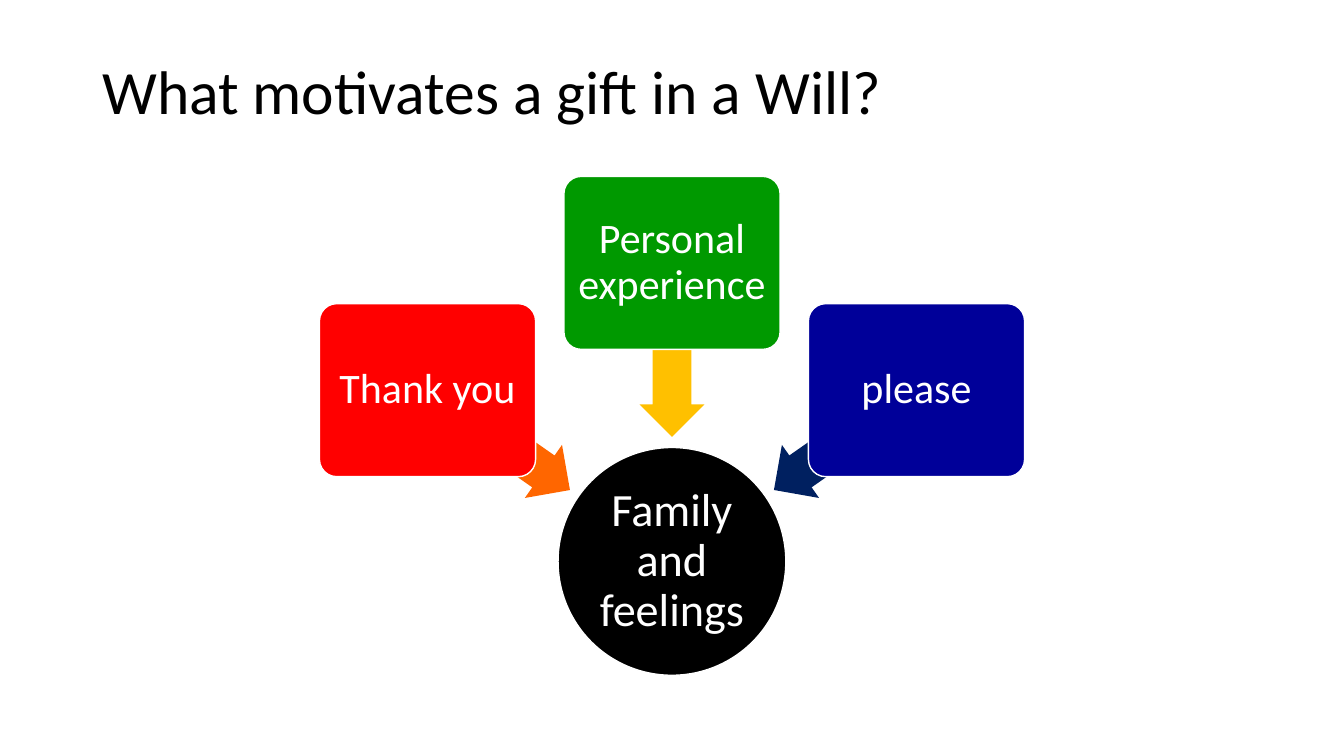
import math
from dataclasses import dataclass

import pptx
import pptx.dml.color
import pptx.enum.shapes
import pptx.enum.text
import pptx.util

Pt = pptx.util.Pt
MSO_SHAPE = pptx.enum.shapes.MSO_SHAPE
PP_ALIGN = pptx.enum.text.PP_ALIGN


@dataclass(frozen=True)
class Theme:
    font: str = "Calibri"
    ink: str = "000000"
    paper: str = "FFFFFF"
    red: str = "FF0000"
    orange: str = "FF6600"
    green: str = "009900"
    amber: str = "FFC000"
    blue: str = "000099"
    navy: str = "002060"
    title_size: float = 44
    hub_size: float = 33
    box_size: float = 30


def rgb(color):
    return pptx.dml.color.RGBColor.from_string(color)


class SlideBuilder:
    def __init__(self, slide, theme):
        self.slide = slide
        self.theme = theme

    def add_text(self, sp, text, size, color, align):
        tf = sp.text_frame
        tf.word_wrap = True
        tf.vertical_anchor = pptx.enum.text.MSO_ANCHOR.MIDDLE
        p = tf.paragraphs[0]
        p.alignment = align
        p.line_spacing = 0.9
        r = p.add_run()
        r.text = text
        r.font.name = self.theme.font
        r.font.size = Pt(size)
        r.font.color.rgb = rgb(color)

    def title(self, text, left, top, width, height):
        sp = self.slide.shapes.add_textbox(Pt(left), Pt(top), Pt(width), Pt(height))
        self.add_text(sp, text, self.theme.title_size, self.theme.ink, PP_ALIGN.LEFT)

    def shape(self, kind, center, width, height, fill):
        x, y = center
        sp = self.slide.shapes.add_shape(
            kind, Pt(x - width / 2), Pt(y - height / 2), Pt(width), Pt(height))
        sp.shadow.inherit = False
        sp.fill.solid()
        sp.fill.fore_color.rgb = rgb(fill)
        sp.line.fill.background()
        return sp

    def node(self, kind, center, width, height, fill, text, size, inset):
        sp = self.shape(kind, center, width, height, fill)
        sp.line.color.rgb = rgb(self.theme.paper)
        sp.line.width = Pt(1)
        tf = sp.text_frame
        tf.margin_left = tf.margin_right = Pt(inset)
        tf.margin_top = tf.margin_bottom = Pt(inset)
        self.add_text(sp, text, size, self.theme.paper, PP_ALIGN.CENTER)
        return sp

    def arrow(self, center, angle, fill):
        sp = self.shape(MSO_SHAPE.LEFT_ARROW, center, 124.5, 46.3, fill)
        sp.adjustments[0] = 0.6
        sp.adjustments[1] = 0.5
        sp.rotation = angle


def around(hub, angle, distance):
    """Point at a clockwise angle in degrees from the hub's right side."""
    a = math.radians(angle)
    return hub[0] + distance * math.cos(a), hub[1] + distance * math.sin(a)


def main():
    prs = pptx.Presentation()
    prs.slide_width, prs.slide_height = Pt(960), Pt(540)
    theme = Theme()
    page = SlideBuilder(prs.slides.add_slide(prs.slide_layouts[6]), theme)

    page.title("What motivates a gift in a Will?", 66, 15, 828, 104.4)

    hub = (480, 401)
    page.node(MSO_SHAPE.OVAL, hub, 162.7, 162.7, theme.ink,
              "Family and feelings", theme.hub_size, 1.5)

    motives = [
        ("Thank you", 215, theme.red, theme.orange),
        ("Personal experience", 270, theme.green, theme.amber),
        ("please", 325, theme.blue, theme.navy),
    ]
    for text, angle, box_fill, arrow_fill in motives:
        page.arrow(around(hub, angle, 151.2), angle, arrow_fill)
        box = page.node(MSO_SHAPE.ROUNDED_RECTANGLE, around(hub, angle, 213.2),
                        154.4, 123.6, box_fill, text, theme.box_size, 4.3)
        box.adjustments[0] = 0.1

    prs.save("out.pptx")


if __name__ == "__main__":
    main()
